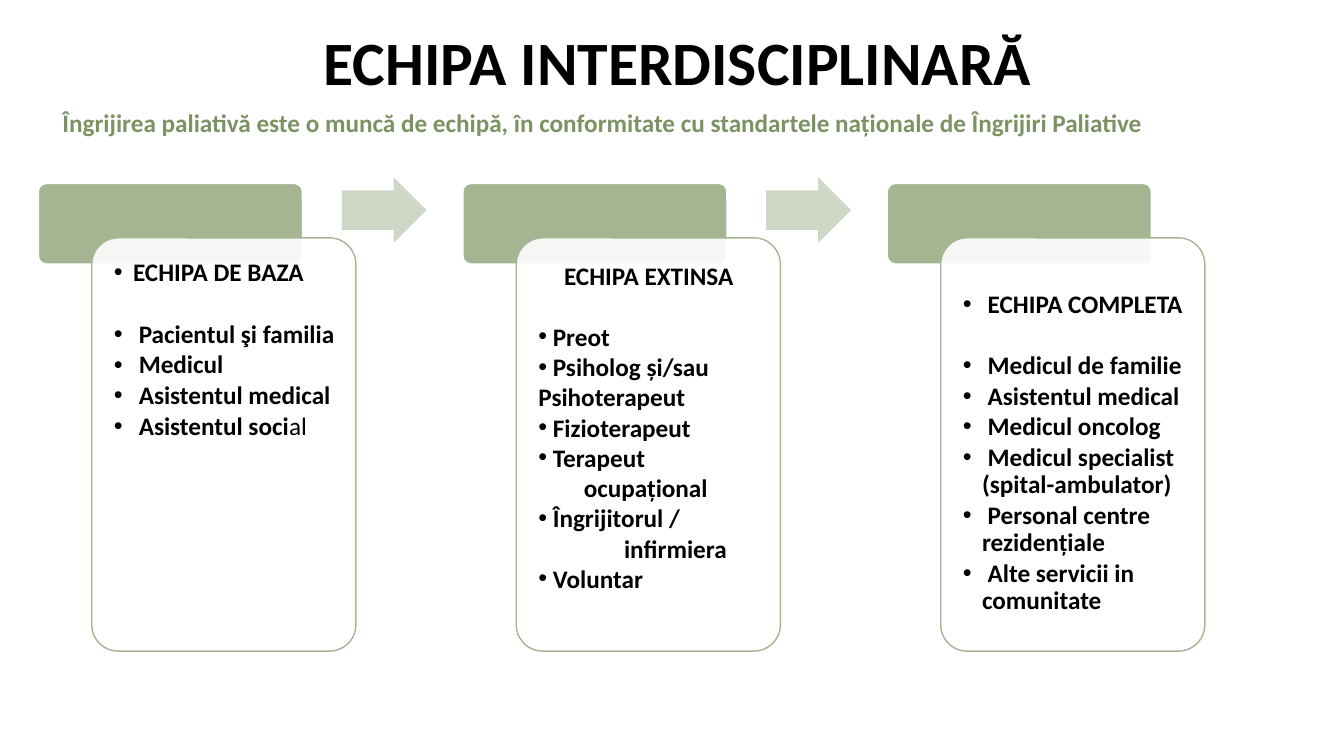
from dataclasses import dataclass

from lxml.etree import SubElement
from pptx import Presentation
from pptx.dml.color import RGBColor
from pptx.enum.shapes import MSO_SHAPE as Preset
from pptx.enum.text import MSO_ANCHOR as Anchor, PP_ALIGN as Align
from pptx.oxml.ns import qn
from pptx.util import Emu, Pt


@dataclass(frozen=True)
class Theme:
    font: str = "Calibri"
    ink: str = "000000"
    paper: str = "FFFFFF"
    sage: str = "A5B592"
    pale_sage: str = "CFD7C7"
    dark_sage: str = "7D9263"
    title_size: int = 44
    text_size: int = 18


@dataclass(frozen=True)
class Box:
    left: int
    top: int
    width: int
    height: int

    def moved(self, right: int = 0, down: int = 0) -> "Box":
        return Box(self.left + right, self.top + down, self.width, self.height - down)

    def emu(self) -> list[Emu]:
        return [px(n) for n in (self.left, self.top, self.width, self.height)]


@dataclass(frozen=True)
class Entry:
    text: str
    bullet: bool = True
    indent: int = 0
    light_ending: str = ""


@dataclass(frozen=True)
class Team:
    heading: Entry
    members: list[Entry]
    heading_align: Align = Align.LEFT
    hanging: int = 19
    line_spacing: float = 0.9
    gap: float = 2.4
    heading_gap: float = 24.5
    text_drop: int = 0


THEME = Theme()
EMU_PER_PX = 9144  # 100 px to the inch
COLUMN_STEP = 421
HEADER = Box(38, 182, 262, 80)
CARD = Box(91, 236, 262, 410)
CARD_TEXT = Box(99, 244, 247, 395)
ARROW = Box(339, 176, 84, 65)
CARD_INSET = 14

TEAMS = [
    Team(Entry("ECHIPA DE BAZA"), [
        Entry(" Pacientul şi familia"),
        Entry(" Medicul"),
        Entry(" Asistentul medical"),
        Entry(" Asistentul soci", light_ending="al"),
    ]),
    Team(Entry("ECHIPA EXTINSA", bullet=False), [
        Entry(" Preot"),
        Entry(" Psiholog și/sau Psihoterapeut"),
        Entry(" Fizioterapeut"),
        Entry(" Terapeut"),
        Entry("ocupațional", bullet=False, indent=45),
        Entry(" Îngrijitorul /"),
        Entry("infirmiera", bullet=False, indent=85),
        Entry(" Voluntar"),
    ], heading_align=Align.CENTER, hanging=0, line_spacing=1.0, gap=0, heading_gap=22),
    Team(Entry(" ECHIPA COMPLETA"), [
        Entry(" Medicul de familie"),
        Entry(" Asistentul medical"),
        Entry(" Medicul oncolog"),
        Entry(" Medicul specialist (spital-ambulator)"),
        Entry(" Personal centre rezidențiale"),
        Entry(" Alte servicii in comunitate"),
    ], text_drop=31),
]


def px(count: int) -> Emu:
    return Emu(count * EMU_PER_PX)


def add_block(page, preset: Preset, box: Box, fill: str, *, line: str | None = None,
              corner: float | None = None, opacity: int = 100):
    block = page.shapes.add_shape(preset, *box.emu())
    block.shadow.inherit = False
    block.fill.solid()
    block.fill.fore_color.rgb = RGBColor.from_string(fill)
    if opacity < 100:
        color = block.fill._xPr.find(qn("a:solidFill"))[0]
        SubElement(color, qn("a:alpha"), val=str(opacity * 1000))
    if line:
        block.line.color.rgb = RGBColor.from_string(line)
        block.line.width = Pt(1)
    else:
        block.line.fill.background()
    if corner is not None:
        block.adjustments[0] = corner
    return block


def add_text_frame(page, box: Box, *, anchor: Anchor = Anchor.TOP, inset: int | None = None):
    frame = page.shapes.add_textbox(*box.emu()).text_frame
    frame.word_wrap = True
    frame.vertical_anchor = anchor
    if inset is not None:
        frame.margin_left = frame.margin_right = px(inset)
        frame.margin_top = frame.margin_bottom = px(inset)
    return frame


def add_span(para, text: str, *, size: int = THEME.text_size, color: str = THEME.ink,
             bold: bool = True) -> None:
    span = para.add_run()
    span.text = text
    span.font.name = THEME.font
    span.font.size = Pt(size)
    span.font.bold = bold
    span.font.color.rgb = RGBColor.from_string(color)


def write_entry(para, entry: Entry, team: Team, *, align: Align, gap: float) -> None:
    para.alignment = align
    para.line_spacing = team.line_spacing
    para.space_after = Pt(gap)
    props = para._p.get_or_add_pPr()
    props.set("marL", str(px(team.hanging + entry.indent)))
    props.set("indent", str(px(-team.hanging)))
    if entry.bullet:
        SubElement(props, qn("a:buFont"), typeface="Arial")
        SubElement(props, qn("a:buChar"), char="•")
    else:
        SubElement(props, qn("a:buNone"))
    add_span(para, entry.text)
    if entry.light_ending:
        add_span(para, entry.light_ending, bold=False)


def add_team(page, team: Team, shift: int) -> None:
    add_block(page, Preset.ROUNDED_RECTANGLE, HEADER.moved(shift), THEME.sage,
              line=THEME.paper, corner=0.1)
    add_block(page, Preset.ROUNDED_RECTANGLE, CARD.moved(shift), THEME.paper,
              line=THEME.sage, corner=0.1, opacity=90)
    frame = add_text_frame(page, CARD_TEXT.moved(shift, team.text_drop), inset=CARD_INSET)
    write_entry(frame.paragraphs[0], team.heading, team,
                align=team.heading_align, gap=team.heading_gap)
    for member in team.members:
        write_entry(frame.add_paragraph(), member, team, align=Align.LEFT, gap=team.gap)


def main() -> None:
    deck = Presentation()
    deck.slide_width, deck.slide_height = px(1333), px(750)
    page = deck.slides.add_slide(deck.slide_layouts[6])

    # Title
    title = add_text_frame(page, Box(125, 15, 1095, 99), anchor=Anchor.MIDDLE).paragraphs[0]
    title.alignment = Align.CENTER
    title.line_spacing = 0.9
    add_span(title, "ECHIPA INTERDISCIPLINARĂ", size=THEME.title_size)

    # Three teams, joined by arrows
    for index, team in enumerate(TEAMS):
        shift = index * COLUMN_STEP
        add_team(page, team, shift)
        if index < len(TEAMS) - 1:
            arrow = add_block(page, Preset.RIGHT_ARROW, ARROW.moved(shift), THEME.pale_sage)
            arrow.adjustments[0] = 0.6

    # Subtitle
    subtitle = add_text_frame(page, Box(52, 102, 1249, 71)).paragraphs[0]
    add_span(subtitle, "Îngrijirea paliativă este o muncă de echipă, în conformitate cu "
             "standartele naționale de Îngrijiri Paliative", color=THEME.dark_sage)

    deck.save("out.pptx")


if __name__ == "__main__":
    main()
